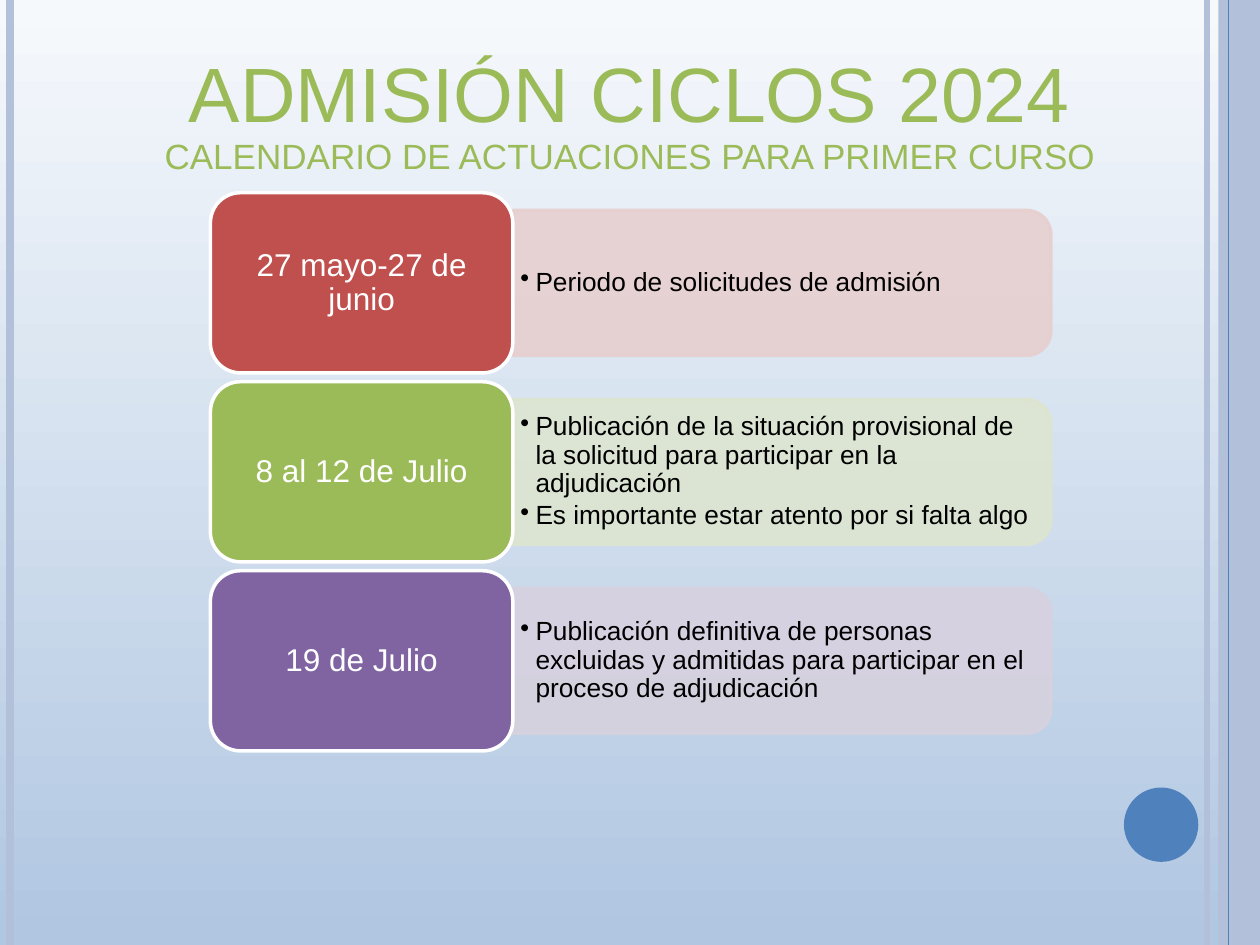
from dataclasses import dataclass

from lxml import etree
from pptx import Presentation
from pptx.dml.color import RGBColor
from pptx.enum.shapes import MSO_CONNECTOR, MSO_SHAPE
from pptx.enum.text import MSO_ANCHOR, PP_ALIGN
from pptx.oxml.ns import qn
from pptx.util import Inches, Pt

STRAIGHT = MSO_CONNECTOR.STRAIGHT
RECTANGLE = MSO_SHAPE.RECTANGLE
OVAL = MSO_SHAPE.OVAL
ROUNDED = MSO_SHAPE.ROUNDED_RECTANGLE
ROUNDED_END = MSO_SHAPE.ROUND_2_SAME_RECTANGLE
MIDDLE = MSO_ANCHOR.MIDDLE
CENTER = PP_ALIGN.CENTER


@dataclass(frozen=True)
class Theme:
    font: str = "Arial"
    sky_top: str = "F6F9FC"
    sky_bottom: str = "B0C6E1"
    stripe: str = "B2C0DA"
    accent: str = "4F81BD"
    heading: str = "9BBB59"
    light: str = "FFFFFF"
    dark: str = "000000"
    title_size: int = 44
    subtitle_size: int = 20
    date_size: int = 18
    detail_size: int = 15
    outline: int = 2
    line_spacing: float = 0.9
    panel_opacity: int = 89
    corner: float = 0.167


THEME = Theme()

SLIDE_WIDTH, SLIDE_HEIGHT = 10, 7.5
CARD_LEFT, CARD_TOP, CARD_WIDTH, CARD_HEIGHT = 1.67, 1.53, 2.4, 1.43
PANEL_WIDTH, PANEL_HEIGHT = 4.27, 1.15
DETAIL_WIDTH, DETAIL_HEIGHT = 4.21, 1.03
ROW_PITCH = 1.5

SCHEDULE = [
    ("27 mayo-27 de junio", "BF504D", "E7CFCF",
     ["Periodo de solicitudes de admisión"]),
    ("8 al 12 de Julio", "9BBB59", "DDE5D0",
     ["Publicación de la situación provisional de la solicitud para "
      "participar en la adjudicación",
      "Es importante estar atento por si falta algo"]),
    ("19 de Julio", "8064A2", "D7D1DF",
     ["Publicación definitiva de personas excluidas y admitidas para "
      "participar en el proceso de adjudicación"]),
]


def rgb(color):
    return RGBColor.from_string(color)


def paint_background(slide):
    fill = slide.background.fill
    fill.gradient()
    fill.gradient_angle = 270
    for stop, color in zip(fill.gradient_stops, (THEME.sky_top, THEME.sky_bottom)):
        stop.color.rgb = rgb(color)


def add_stripe(slide, x, color, weight):
    stripe = slide.shapes.add_connector(
        STRAIGHT, Inches(x), Inches(0), Inches(x), Inches(SLIDE_HEIGHT))
    stripe.line.color.rgb = rgb(color)
    stripe.line.width = Pt(weight)
    etree.SubElement(stripe._element.spPr, qn("a:effectLst"))


def add_block(slide, preset, left, top, width, height, fill, outline=None):
    block = slide.shapes.add_shape(
        preset, Inches(left), Inches(top), Inches(width), Inches(height))
    block.shadow.inherit = False
    block.fill.solid()
    block.fill.fore_color.rgb = rgb(fill)
    if outline:
        block.line.color.rgb = rgb(outline)
        block.line.width = Pt(THEME.outline)
    else:
        block.line.fill.background()
    return block


def set_opacity(block, percent):
    for color in block._element.spPr.iter(qn("a:srgbClr")):
        etree.SubElement(color, qn("a:alpha"), val=str(percent * 1000))


def prepare_frame(shape, horizontal, vertical):
    frame = shape.text_frame
    frame.word_wrap = True
    frame.vertical_anchor = MIDDLE
    frame.margin_left = frame.margin_right = Inches(horizontal)
    frame.margin_top = frame.margin_bottom = Inches(vertical)
    return frame


def style_paragraph(paragraph, color, size=None):
    paragraph.line_spacing = THEME.line_spacing
    paragraph.font.name = THEME.font
    paragraph.font.color.rgb = rgb(color)
    if size:
        paragraph.font.size = Pt(size)


def add_bullet(paragraph):
    properties = paragraph._p.get_or_add_pPr()
    properties.set("marL", str(Inches(0.12)))
    properties.set("indent", str(-Inches(0.12)))
    bullet = etree.Element(qn("a:buChar"), char="•")
    properties.find(qn("a:defRPr")).addprevious(bullet)


def add_heading(slide, title, subtitle):
    heading = slide.shapes.add_textbox(
        Inches(0.5), Inches(0.3), Inches(9), Inches(1.25))
    paragraph = prepare_frame(heading, 0, 0).paragraphs[0]
    paragraph.alignment = CENTER
    style_paragraph(paragraph, THEME.heading)
    title_run = paragraph.add_run()
    title_run.text = title
    title_run.font.size = Pt(THEME.title_size)
    paragraph.add_line_break()
    subtitle_run = paragraph.add_run()
    subtitle_run.text = subtitle
    subtitle_run.font.size = Pt(THEME.subtitle_size)


def add_panel(slide, left, middle, tint):
    panel = add_block(
        slide, ROUNDED_END,
        left + (PANEL_WIDTH - PANEL_HEIGHT) / 2, middle - PANEL_WIDTH / 2,
        PANEL_HEIGHT, PANEL_WIDTH, tint, tint)
    panel.rotation = 90
    panel.adjustments[0] = THEME.corner
    panel.adjustments[1] = 0
    set_opacity(panel, THEME.panel_opacity)


def add_details(slide, left, middle, details):
    box = slide.shapes.add_textbox(
        Inches(left), Inches(middle - DETAIL_HEIGHT / 2),
        Inches(DETAIL_WIDTH), Inches(DETAIL_HEIGHT))
    frame = prepare_frame(box, 0.06, 0.03)
    for index, detail in enumerate(details):
        paragraph = frame.add_paragraph() if index else frame.paragraphs[0]
        paragraph.text = detail
        style_paragraph(paragraph, THEME.dark, THEME.detail_size)
        if index:
            paragraph.space_before = Pt(2.2)
        add_bullet(paragraph)


def add_date_card(slide, top, date, color):
    card = add_block(slide, ROUNDED, CARD_LEFT, top, CARD_WIDTH, CARD_HEIGHT,
                     color, THEME.light)
    card.adjustments[0] = THEME.corner
    paragraph = prepare_frame(card, 0.07, 0.04).paragraphs[0]
    paragraph.text = date
    paragraph.alignment = CENTER
    style_paragraph(paragraph, THEME.light, THEME.date_size)


def add_schedule(slide):
    panel_left = CARD_LEFT + CARD_WIDTH
    for row, (date, color, tint, details) in enumerate(SCHEDULE):
        top = CARD_TOP + row * ROW_PITCH
        middle = top + CARD_HEIGHT / 2
        add_panel(slide, panel_left, middle, tint)
        add_details(slide, panel_left, middle, details)
        add_date_card(slide, top, date, color)


def add_decoration(slide):
    add_stripe(slide, 9.58, THEME.stripe, 3)
    add_stripe(slide, 0.08, THEME.stripe, 4.5)
    add_block(slide, RECTANGLE, 9.67, 0, 0.33, SLIDE_HEIGHT, THEME.stripe)
    add_stripe(slide, 9.75, THEME.accent, 0.75)
    add_block(slide, OVAL, 8.92, 6.25, 0.59, 0.59, THEME.accent)


def main():
    deck = Presentation()
    deck.slide_width = Inches(SLIDE_WIDTH)
    deck.slide_height = Inches(SLIDE_HEIGHT)
    slide = deck.slides.add_slide(deck.slide_layouts[6])
    paint_background(slide)
    add_decoration(slide)
    add_heading(slide, "ADMISIÓN CICLOS 2024",
                "CALENDARIO DE ACTUACIONES PARA PRIMER CURSO")
    add_schedule(slide)
    deck.save("out.pptx")


if __name__ == "__main__":
    main()
